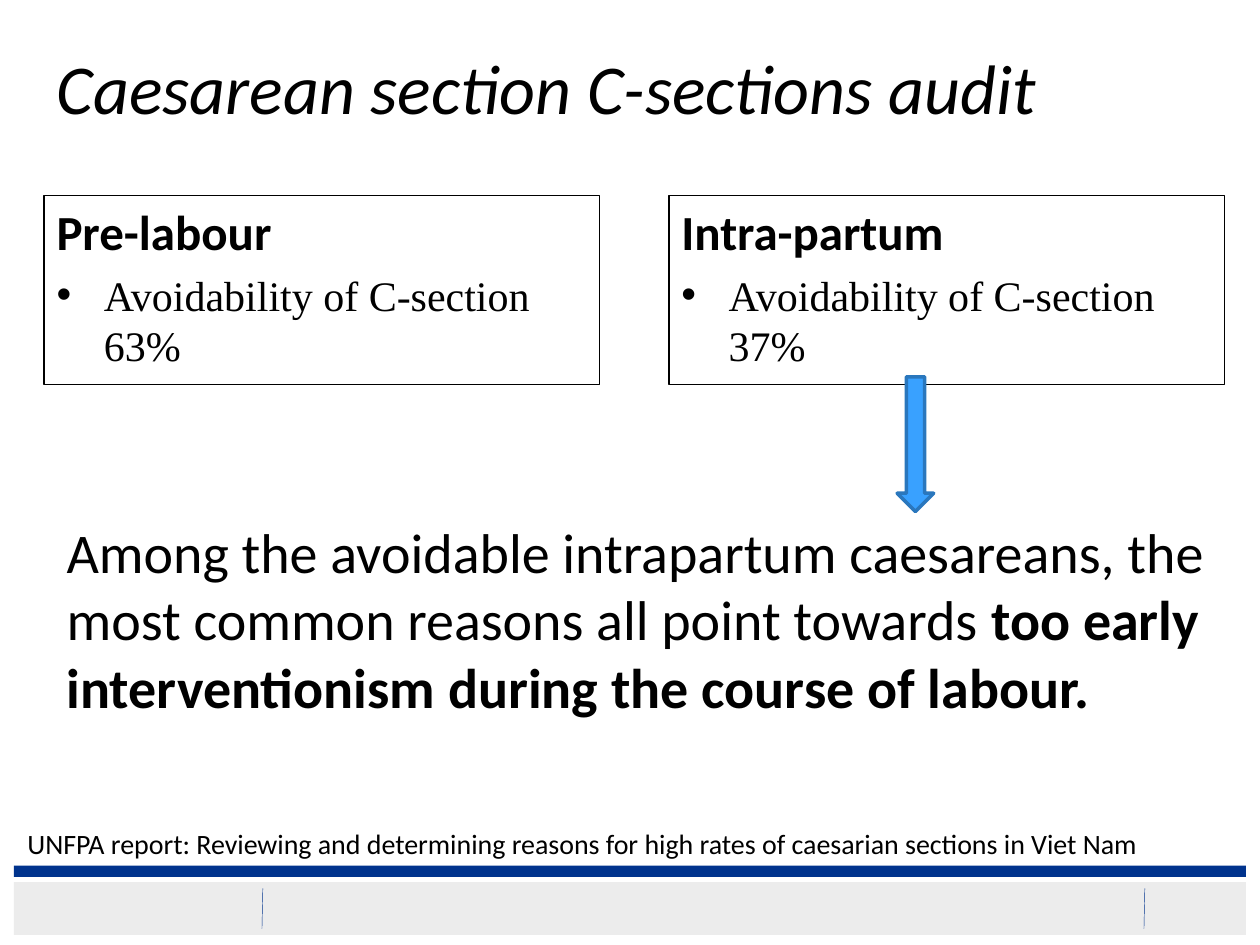
"""Build the slide on the Caesarean section audit."""
from lxml import etree
from pptx import Presentation
from pptx.dml.color import RGBColor
from pptx.enum import shapes, text
from pptx.oxml import ns
from pptx.util import Pt

TITLE = "Caesarean section C-sections audit"
PHASES = [("Pre-labour", "Avoidability of C-section 63%"),
          ("Intra-partum", "Avoidability of C-section 37%")]
FINDING = [("Among the avoidable intrapartum caesareans, the most common reasons "
            "all point towards ", False),
           ("too early interventionism during the course of labour.", True)]
SOURCE = ("UNFPA report: Reviewing and determining reasons for high rates of "
          "caesarian sections in Viet Nam")
THEME = dict(ink="000000", navy="00338D", band="ECECEC", arrow="39A1FF",
             arrow_line="2A77BD", body="Calibri", serif="Times New Roman",
             title=40, finding=32, heading=28, bullet=24, source=16)


def rgb(name):
    return RGBColor.from_string(THEME[name])


def write(p, words, size, face="body", bold=False, italic=False):
    r = p.add_run()
    r.text = words
    r.font.name, r.font.size = THEME[face], Pt(THEME[size])
    r.font.bold, r.font.italic = bold, italic
    r.font.color.rgb = rgb("ink")
    p.alignment = text.PP_ALIGN.LEFT


def add_bullet(p, indent):
    pPr = p._p.get_or_add_pPr()
    pPr.set("marL", str(Pt(indent)))
    pPr.set("indent", str(-Pt(indent)))
    etree.SubElement(pPr, ns.qn("a:buFont")).set("typeface", "Arial")
    etree.SubElement(pPr, ns.qn("a:buChar")).set("char", "•")


def add_shape(s, kind, box, fill=None, line=None, width=0.75):
    sp = s.shapes.add_shape(kind, *map(Pt, box))
    sp.shadow.inherit = False
    if fill:
        sp.fill.solid()
        sp.fill.fore_color.rgb = rgb(fill)
    else:
        sp.fill.background()
    if line:
        sp.line.color.rgb = rgb(line)
        sp.line.width = Pt(width)
    else:
        sp.line.fill.background()
    return sp


def add_text(s, box):
    tf = s.shapes.add_textbox(*map(Pt, box)).text_frame
    tf.word_wrap = True
    return tf.paragraphs[0]


def add_footer(s):
    rect = shapes.MSO_SHAPE.RECTANGLE
    add_shape(s, rect, (8, 504, 704, 30.2), fill="band")
    add_shape(s, rect, (8, 494.6, 704, 6.5), fill="navy")
    for x in (150.2, 654.2):
        cn = s.shapes.add_connector(shapes.MSO_CONNECTOR.STRAIGHT,
                                    Pt(x), Pt(507.6), Pt(x - 0.5), Pt(530.6))
        cn.line.color.rgb = rgb("navy")
        cn.line.width = Pt(0.25)
        etree.SubElement(cn._element.spPr, ns.qn("a:effectLst"))


def add_phase(s, left, heading, point):
    sp = add_shape(s, shapes.MSO_SHAPE.RECTANGLE, (left, 111.6, 317.5, 108), line="ink")
    tf = sp.text_frame
    tf.word_wrap = True
    tf.vertical_anchor = text.MSO_ANCHOR.TOP
    write(tf.paragraphs[0], heading, "heading", bold=True)
    p = tf.add_paragraph()
    add_bullet(p, 27)
    p.space_before = Pt(5)
    write(p, point, "bullet", "serif")


def main():
    prs = Presentation()
    prs.slide_width, prs.slide_height = Pt(720), Pt(540)
    s = prs.slides.add_slide(prs.slide_layouts[5])
    add_footer(s)

    title = s.shapes.title
    title.left, title.top, title.width, title.height = map(Pt, (25.2, 20.9, 668.9, 56.9))
    tf = title.text_frame
    tf.vertical_anchor = text.MSO_ANCHOR.MIDDLE
    write(tf.paragraphs[0], TITLE, "title", italic=True)

    write(add_text(s, (8.6, 468.7, 702.7, 26.6)), SOURCE, "source")
    for i, (heading, point) in enumerate(PHASES):
        add_phase(s, 25.2 + i * 357.1, heading, point)
    p = add_text(s, (31, 292.3, 674.6, 123.8))
    for words, bold in FINDING:
        write(p, words, "finding", bold=bold)

    arrow = add_shape(s, shapes.MSO_SHAPE.RIGHT_ARROW, (484.6, 243.4, 77, 20.9),
                      fill="arrow", line="arrow_line", width=2)
    arrow.rotation = 90
    prs.save("out.pptx")


if __name__ == "__main__":
    main()
